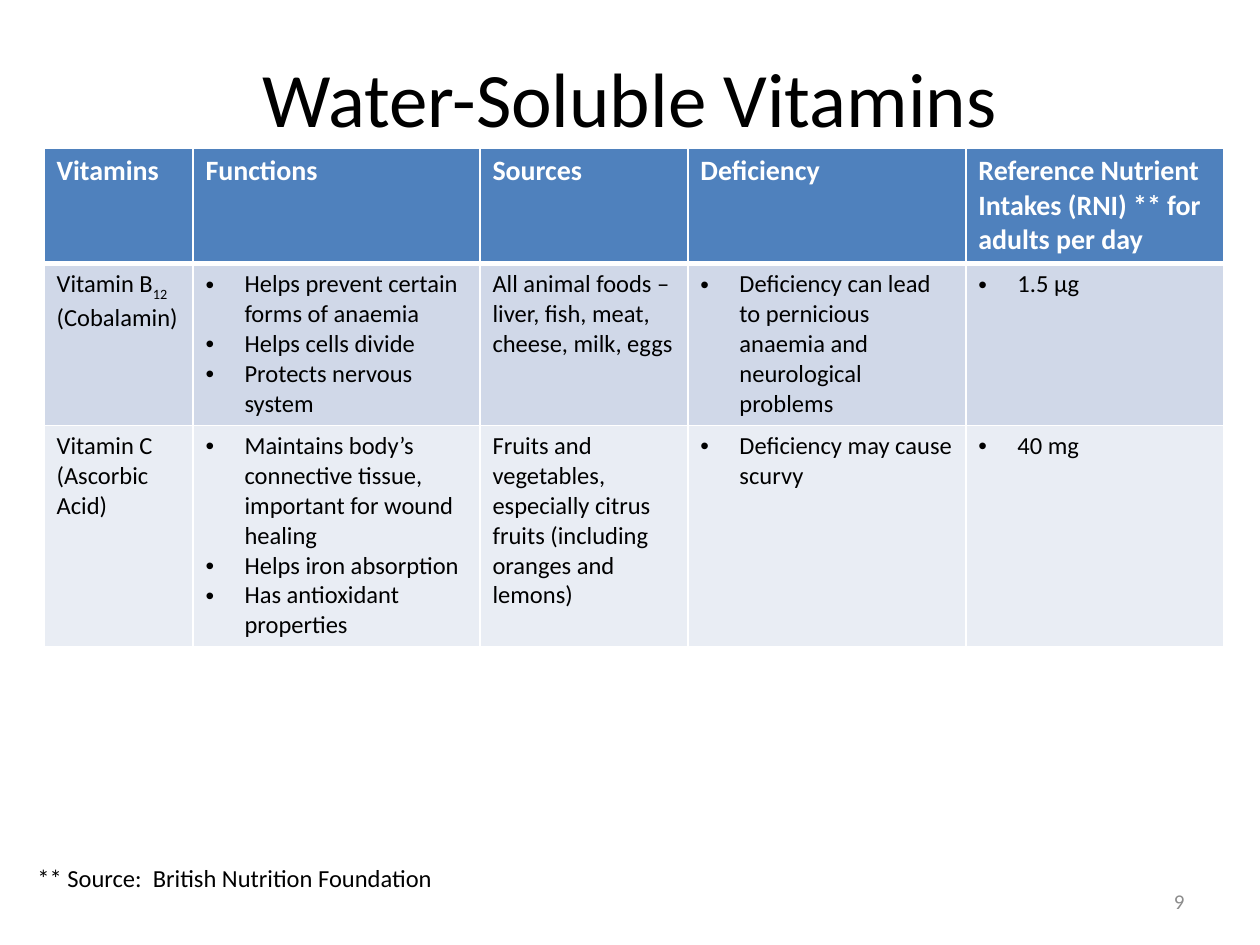
from lxml import etree
from pptx import Presentation, util as u
from pptx.dml.color import RGBColor
from pptx.enum import text as t
from pptx.oxml.ns import qn

PX = u.Inches(1) // 126
HEX = {"head": "4F81BD", "odd": "D0D8E8", "even": "E9EDF4",
       "white": "FFFFFF", "black": "000000", "grey": "8C8C8C"}


def write(para, words, size, color, bold=False):
    run = para.add_run()
    run.text = words
    style = {"name": "Calibri", "size": u.Pt(size), "bold": bold}
    for key, val in style.items():
        setattr(run.font, key, val)
    run.font.color.rgb = RGBColor.from_string(HEX[color])
    return run


def edge(cell, sides):
    """Draw white cell borders; sides maps a side letter to points."""
    props = cell._tc.get_or_add_tcPr()
    for spot, (side, width) in enumerate(sides.items()):
        line = etree.Element(qn("a:ln" + side), w=str(u.Pt(width)))
        fill = etree.SubElement(line, qn("a:solidFill"))
        etree.SubElement(fill, qn("a:srgbClr"), val=HEX["white"])
        props.insert(spot, line)


prs = Presentation()
prs.slide_width, prs.slide_height = 1260 * PX, 945 * PX
slide = prs.slides.add_slide(prs.slide_layouts[6])

# Vitamin table: a list in a cell is bulleted, a tuple has a subscript
rows = [
    ["Vitamins", "Functions", "Sources", "Deficiency",
     "Reference Nutrient Intakes (RNI) ** for adults per day"],
    [("Vitamin B", "12", " (Cobalamin)"),
     ["Helps prevent certain forms of anaemia", "Helps cells divide",
      "Protects nervous system"],
     "All animal foods – liver, fish, meat, cheese, milk, eggs",
     ["Deficiency can lead to pernicious anaemia and neurological problems"],
     ["1.5 µg"]],
    ["Vitamin C (Ascorbic Acid)",
     ["Maintains body’s connective tissue, important for wound healing",
      "Helps iron absorption", "Has antioxidant properties"],
     "Fruits and vegetables, especially citrus fruits "
     "(including oranges and lemons)",
     ["Deficiency may cause scurvy"],
     ["40 mg"]],
]
wide = [149, 287, 208, 278, 258]
high = [115, 162, 220]
looks = [("head", 16, "white", True), ("odd", 14, "black", False),
         ("even", 14, "black", False)]
grid = slide.shapes.add_table(3, 5, 44 * PX, 148 * PX,
                              sum(wide) * PX, sum(high) * PX).table
for col, width in zip(grid.columns, wide):
    col.width = width * PX
for r, (row, (back, *look)) in enumerate(zip(rows, looks)):
    grid.rows[r].height = high[r] * PX
    for c, item in enumerate(row):
        cell = grid.cell(r, c)
        cell.fill.solid()
        cell.fill.fore_color.rgb = RGBColor.from_string(HEX[back])
        edge(cell, {"L": 1, "R": 1, "T": 3 if r == 1 else 1,
                    "B": 3 if r == 0 else 1})
        if r and c == 0:
            cell.margin_right = 6 * PX
        frame = cell.text_frame
        if isinstance(item, list):
            for i, words in enumerate(item):
                para = frame.add_paragraph() if i else frame.paragraphs[0]
                write(para, words, *look)
                props = para._p.get_or_add_pPr()
                props.set("marL", str(39 * PX))
                props.set("indent", str(-39 * PX))
                etree.SubElement(props, qn("a:buFont"), typeface="Arial")
                etree.SubElement(props, qn("a:buChar"), char="•")
        else:
            parts = item if isinstance(item, tuple) else (item,)
            for i, words in enumerate(parts):
                run = write(frame.paragraphs[0], words, *look)
                if i == 1:
                    run.font._element.set("baseline", "-25000")

# Title, page number and source note
mid, top = t.MSO_ANCHOR.MIDDLE, t.MSO_ANCHOR.TOP
side = t.PP_ALIGN
notes = [
    ("Water-Soluble Vitamins", (63, 18, 1134, 157), 44, "black", mid, side.CENTER),
    ("9", (903, 876, 294, 50), 12, "grey", mid, side.RIGHT),
    ("** Source:  British Nutrition Foundation", (25, 857, 1160, 43), 14,
     "black", top, side.LEFT),
]
for words, place, size, color, anchor, align in notes:
    frame = slide.shapes.add_textbox(*(n * PX for n in place)).text_frame
    for key, val in {"word_wrap": True, "vertical_anchor": anchor}.items():
        setattr(frame, key, val)
    para = frame.paragraphs[0]
    para.alignment = align
    write(para, words, size, color)

prs.save("out.pptx")
